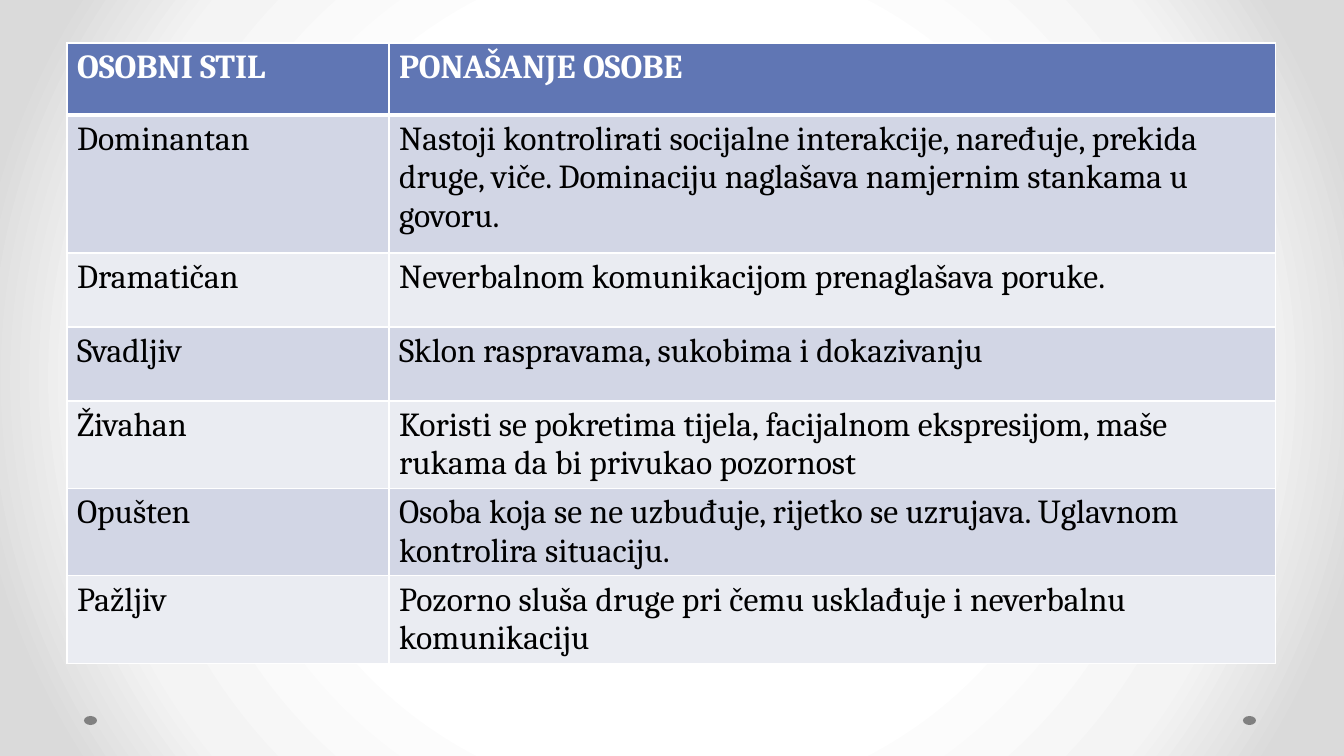
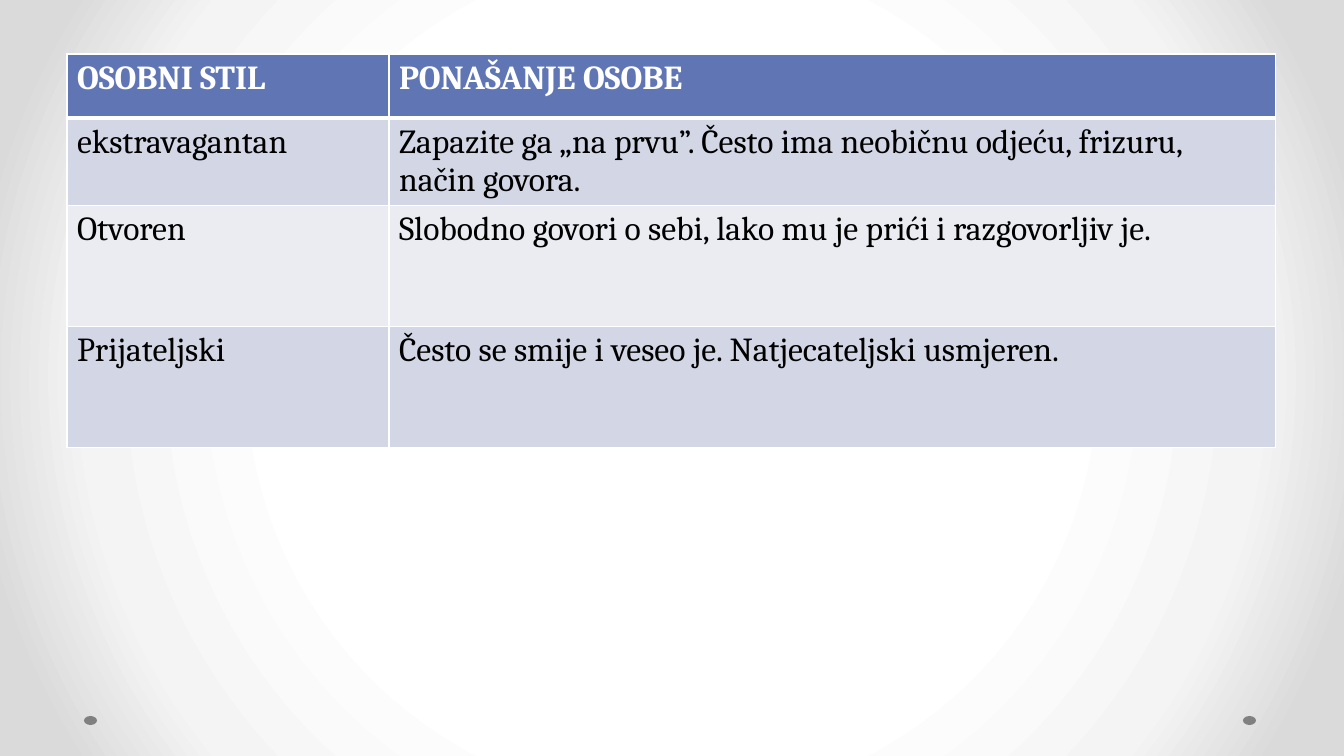
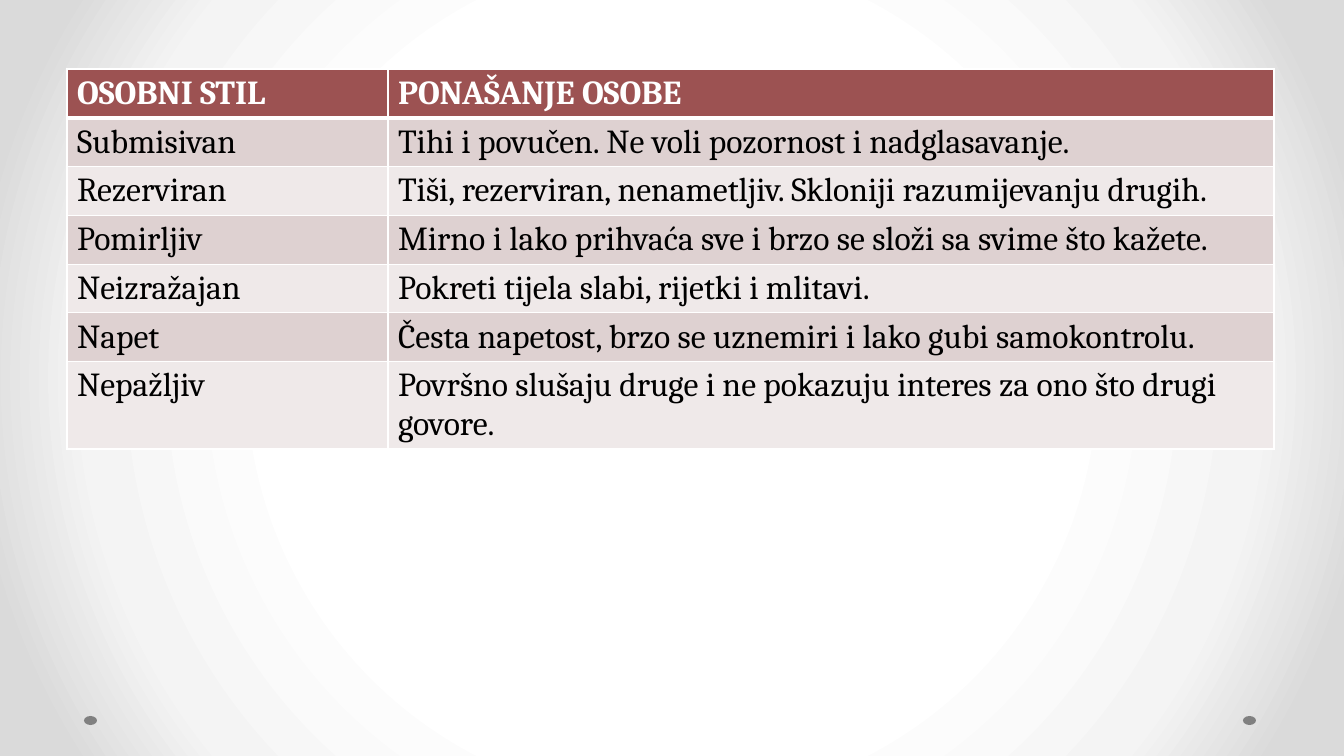
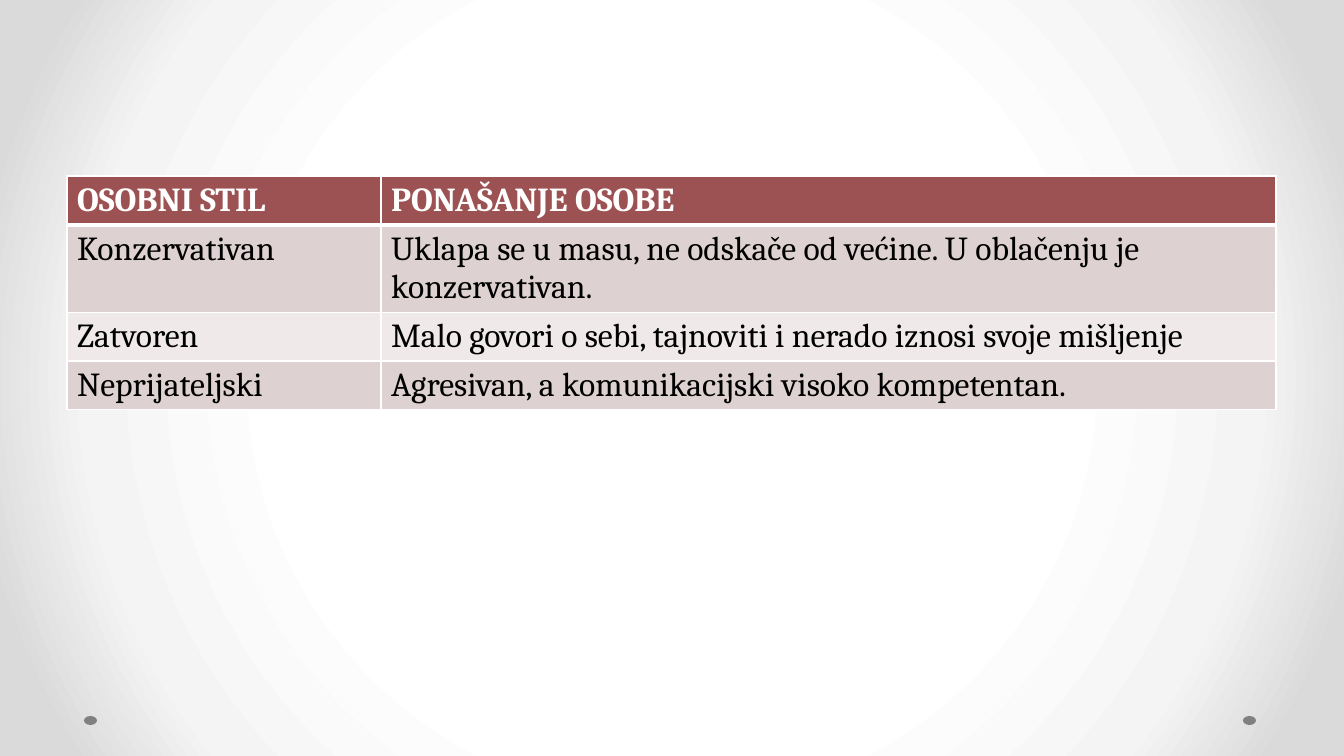
from dataclasses import dataclass

from lxml import etree
from pptx import Presentation
from pptx.dml.color import RGBColor as RGB
from pptx.enum.shapes import MSO_SHAPE as SHAPE
from pptx.oxml import parse_xml
from pptx.oxml.ns import nsdecls, qn
from pptx.util import Pt

EMU_PER_PX = 914400 / 100.8
SLIDE_W, SLIDE_H = 1344, 756
TABLE_LEFT = 67
FONT, TEXT_PT = "Cambria", 24
HEADER = ("OSOBNI STIL", "PONAŠANJE OSOBE")
THIN, THICK = 1, 3

COLORS = {
    "white": "FFFFFF", "black": "000000", "dot": "808080",
    "bg_mid": "F4F4F4", "bg_edge": "DADADA",
    "blue": "6076B4", "blue_odd": "D2D6E5", "blue_even": "EAECF2",
    "red": "9C5252", "red_odd": "DED1D1", "red_even": "EFE9E9",
}
BG_STOPS = ((50, "white"), (76, "bg_mid"), (92, "bg_edge"))


@dataclass
class Dot:
    left: int
    top: int = 716
    width: int = 13
    height: int = 9


@dataclass
class StyleTable:
    hue: str
    top: int
    cols: tuple[int, int]
    row_heights: list[int]
    rows: list[tuple[str, str]]


DOTS = [Dot(84), Dot(1243)]

TABLES = [
    StyleTable("blue", 43, (322, 887), [72, 138, 74, 74, 87, 87, 87], [
        ("Dominantan", "Nastoji kontrolirati socijalne interakcije, naređuje, prekida "
                       "druge, viče. Dominaciju naglašava namjernim stankama u govoru."),
        ("Dramatičan", "Neverbalnom komunikacijom prenaglašava poruke."),
        ("Svadljiv", "Sklon raspravama, sukobima i dokazivanju"),
        ("Živahan", "Koristi se pokretima tijela, facijalnom ekspresijom, maše "
                    "rukama da bi privukao pozornost"),
        ("Opušten", "Osoba koja se ne uzbuđuje, rijetko se uzrujava. Uglavnom "
                    "kontrolira situaciju."),
        ("Pažljiv", "Pozorno sluša druge pri čemu usklađuje i neverbalnu komunikaciju"),
    ]),
    StyleTable("blue", 54, (322, 887), [64, 87, 121, 121], [
        ("ekstravagantan", "Zapazite ga „na prvu”. Često ima neobičnu odjeću, frizuru, "
                           "način govora."),
        ("Otvoren", "Slobodno govori o sebi, lako mu je prići i razgovorljiv je."),
        ("Prijateljski", "Često se smije i veseo je. Natjecateljski usmjeren."),
    ]),
    StyleTable("red", 69, (321, 886), [48] * 6 + [87], [
        ("Submisivan", "Tihi i povučen. Ne voli pozornost i nadglasavanje."),
        ("Rezerviran", "Tiši, rezerviran, nenametljiv. Skloniji razumijevanju drugih."),
        ("Pomirljiv", "Mirno i lako prihvaća sve i brzo se složi sa svime što kažete."),
        ("Neizražajan", "Pokreti tijela slabi, rijetki i mlitavi."),
        ("Napet", "Česta napetost, brzo se uznemiri i lako gubi samokontrolu."),
        ("Nepažljiv", "Površno slušaju druge i ne pokazuju interes za ono što drugi govore."),
    ]),
    StyleTable("red", 176, (314, 895), [48, 87, 48, 48], [
        ("Konzervativan", "Uklapa se u masu, ne odskače od većine. U oblačenju je "
                          "konzervativan."),
        ("Zatvoren", "Malo govori o sebi, tajnoviti i nerado iznosi svoje mišljenje"),
        ("Neprijateljski", "Agresivan, a komunikacijski visoko kompetentan."),
    ]),
]


def px(n: int) -> int:
    return round(n * EMU_PER_PX)


def rgb(name: str) -> RGB:
    return RGB.from_string(COLORS[name])


def set_background(master) -> None:
    """Give the master a radial gradient that every slide inherits."""
    fill = master.background.fill
    fill.solid()
    solid = master.element.find(".//" + qn("p:bgPr")).find(qn("a:solidFill"))
    stops = "".join(f'<a:gs pos="{pos * 1000}"><a:srgbClr val="{COLORS[name]}"/></a:gs>'
                    for pos, name in BG_STOPS)
    gradient = parse_xml(
        f'<a:gradFill {nsdecls("a")} rotWithShape="1"><a:gsLst>{stops}</a:gsLst>'
        '<a:path path="circle"><a:fillToRect l="50000" t="50000" r="50000" b="50000"/>'
        '</a:path></a:gradFill>')
    solid.getparent().replace(solid, gradient)


def add_master_dots(master, slide) -> None:
    """Draw the footer dots on a slide, then move them to the master."""
    tree = master.element.find(".//" + qn("p:spTree"))
    for i, dot in enumerate(DOTS):
        s = slide.shapes.add_shape(SHAPE.OVAL, px(dot.left), px(dot.top),
                                   px(dot.width), px(dot.height))
        s.shadow.inherit = False
        s.fill.solid()
        s.fill.fore_color.rgb = rgb("dot")
        s.line.fill.background()
        s.element.find(".//" + qn("p:cNvPr")).set("id", str(100 + i))
        tree.append(s.element)


def set_borders(cell, top: int, bottom: int) -> None:
    tc_pr = cell._tc.get_or_add_tcPr()
    for side, width in (("L", THIN), ("R", THIN), ("T", top), ("B", bottom)):
        ln = etree.SubElement(tc_pr, qn(f"a:ln{side}"), w=str(Pt(width)))
        fill = etree.SubElement(ln, qn("a:solidFill"))
        etree.SubElement(fill, qn("a:srgbClr"), val=COLORS["white"])


def fill_cell(cell, text: str, row: int, hue: str) -> None:
    is_header = row == 0
    set_borders(cell, THICK if row == 1 else THIN, THICK if is_header else THIN)
    band = hue if is_header else f"{hue}_{'odd' if row % 2 else 'even'}"
    cell.fill.solid()
    cell.fill.fore_color.rgb = rgb(band)
    r = cell.text_frame.paragraphs[0].add_run()
    r.text = text
    r.font.name, r.font.size, r.font.bold = FONT, Pt(TEXT_PT), is_header
    r.font.color.rgb = rgb("white" if is_header else "black")


def add_style_table(slide, spec: StyleTable) -> None:
    rows = [HEADER, *spec.rows]
    table = slide.shapes.add_table(
        len(rows), len(HEADER), px(TABLE_LEFT), px(spec.top),
        px(sum(spec.cols)), px(sum(spec.row_heights))).table
    for column, width in zip(table.columns, spec.cols):
        column.width = px(width)
    for i, (texts, height) in enumerate(zip(rows, spec.row_heights)):
        table.rows[i].height = px(height)
        for j, text in enumerate(texts):
            fill_cell(table.cell(i, j), text, i, spec.hue)


def main() -> None:
    prs = Presentation()
    prs.slide_width, prs.slide_height = px(SLIDE_W), px(SLIDE_H)
    blank = prs.slide_layouts[6]
    slides = [prs.slides.add_slide(blank) for _ in TABLES]

    # Shared look
    set_background(prs.slide_master)
    add_master_dots(prs.slide_master, slides[0])

    # One table per slide
    for slide, spec in zip(slides, TABLES):
        add_style_table(slide, spec)
    prs.save("out.pptx")


if __name__ == "__main__":
    main()
